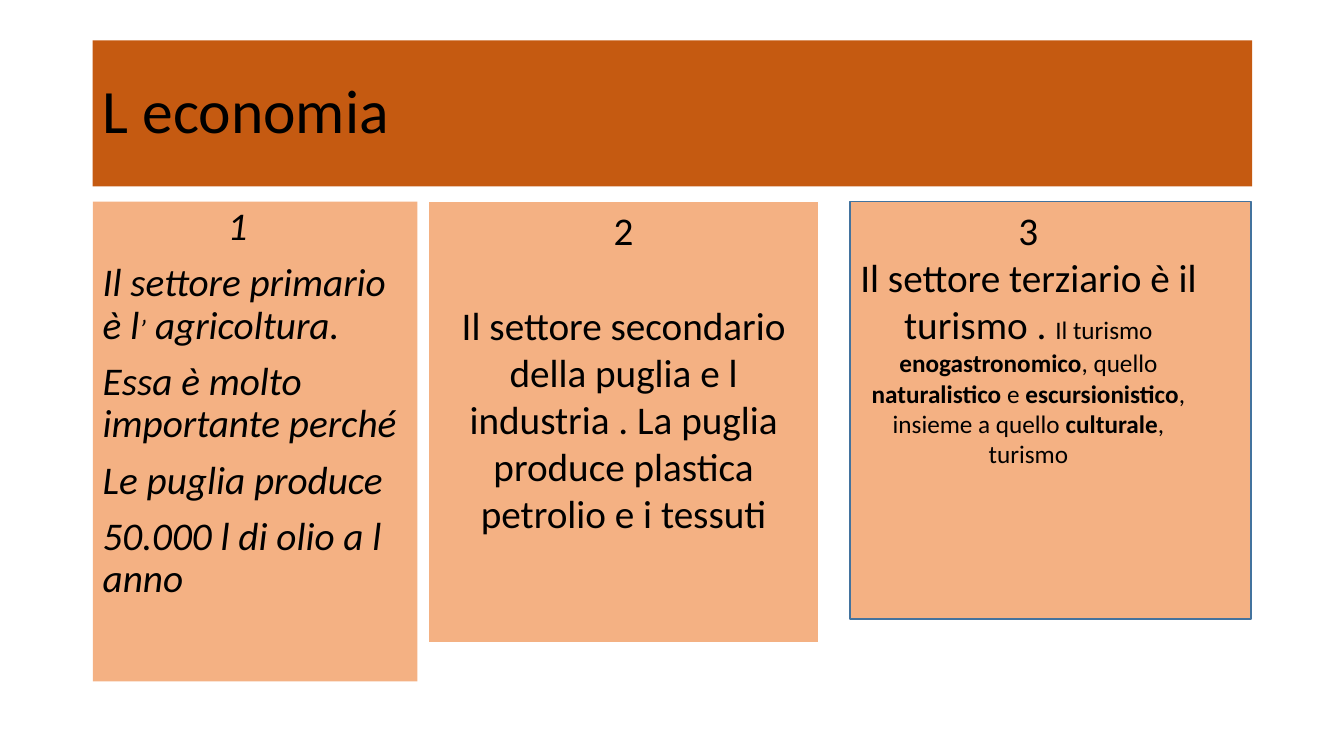
import pptx
import pptx.util
import pptx.dml.color
import pptx.enum.shapes
import pptx.enum.text

Inches, Pt = pptx.util.Inches, pptx.util.Pt
RGBColor = pptx.dml.color.RGBColor
ALIGN = pptx.enum.text.PP_ALIGN
ANCHOR = pptx.enum.text.MSO_ANCHOR

ORANGE = RGBColor(0xC5, 0x5A, 0x11)
PEACH = RGBColor(0xF4, 0xB1, 0x83)
BLUE = RGBColor(0x43, 0x73, 0x9E)
WHITE = RGBColor(0xFF, 0xFF, 0xFF)
BLACK = RGBColor(0, 0, 0)

MARGIN, TOP = 0.92, 2

prs = pptx.Presentation()
prs.slide_width, prs.slide_height = Inches(13.33), Inches(7.5)
s = prs.slides.add_slide(prs.slide_layouts[6])


def add_box(x, y, w, h, fill, line=None, anchor=ANCHOR.TOP):
    sp = s.shapes.add_shape(pptx.enum.shapes.MSO_SHAPE.RECTANGLE,
                            Inches(x), Inches(y), Inches(w), Inches(h))
    sp.shadow.inherit = False
    sp.fill.solid()
    sp.fill.fore_color.rgb = fill
    if line is None:
        sp.line.fill.background()
    else:
        sp.line.color.rgb = line
        sp.line.width = Pt(1)
    tf = sp.text_frame
    tf.word_wrap = True
    tf.vertical_anchor = anchor
    return tf


def add_paragraphs(tf, paragraphs, align, italic=False, spacing=1.0, before=0):
    """Each paragraph is a list of runs: (text, size, bold)."""
    for i, runs in enumerate(paragraphs):
        p = tf.paragraphs[0] if i == 0 else tf.add_paragraph()
        p.alignment = align
        p.line_spacing = spacing
        p.space_before = Pt(before)
        for text, size, bold in runs:
            r = p.add_run()
            r.text = text
            r.font.name = "Calibri"
            r.font.size = Pt(size)
            r.font.bold = bold
            r.font.italic = italic
            r.font.color.rgb = BLACK


# Title band
tf = add_box(MARGIN, 0.4, 11.5, 1.45, ORANGE, anchor=ANCHOR.MIDDLE)
add_paragraphs(tf, [[("L economia", 44, False)]], ALIGN.LEFT, spacing=0.9)

# Column 1: primary sector, its number pushed in by a first-line indent
tf = add_box(MARGIN, TOP, 3.22, 4.76, PEACH)
add_paragraphs(tf, [
    [("1", 28, False)],
    [("Il settore primario è l", 28, False), ("’", 20, False),
     (" agricoltura.", 28, False)],
    [("Essa è molto importante perché", 28, False)],
    [("Le puglia produce", 28, False)],
    [("50.000 l di olio a l anno", 28, False)],
], ALIGN.LEFT, italic=True, spacing=0.9, before=10)
tf.paragraphs[0]._p.get_or_add_pPr().set("indent", str(Inches(1.24)))

# Column 2: secondary sector, one line of space under its number
tf = add_box(4.25, TOP, 3.87, 4.38, PEACH, WHITE)
add_paragraphs(tf, [
    [("2", 28, False)],
    [("Il settore secondario della puglia e l industria . "
      "La puglia produce plastica petrolio e i tessuti", 28, False)],
], ALIGN.CENTER)
tf.paragraphs[0].space_after = Pt(34)

# Column 3: tertiary sector, its number set left of centre by a right margin
tf = add_box(8.43, TOP, 3.98, 4.14, PEACH, BLUE)
add_paragraphs(tf, [
    [("3", 28, False)],
    [("Il settore terziario è il turismo . ", 28, False),
     ("Il turismo ", 18, False), ("enogastronomico", 18, True),
     (", quello ", 18, False), ("naturalistico", 18, True),
     (" e ", 18, False), ("escursionistico", 18, True),
     (", insieme a quello", 18, False), (" culturale", 18, True),
     (", turismo", 18, False)],
], ALIGN.CENTER)
tf.paragraphs[0]._p.get_or_add_pPr().set("marR", str(Inches(0.44)))

prs.save("out.pptx")
